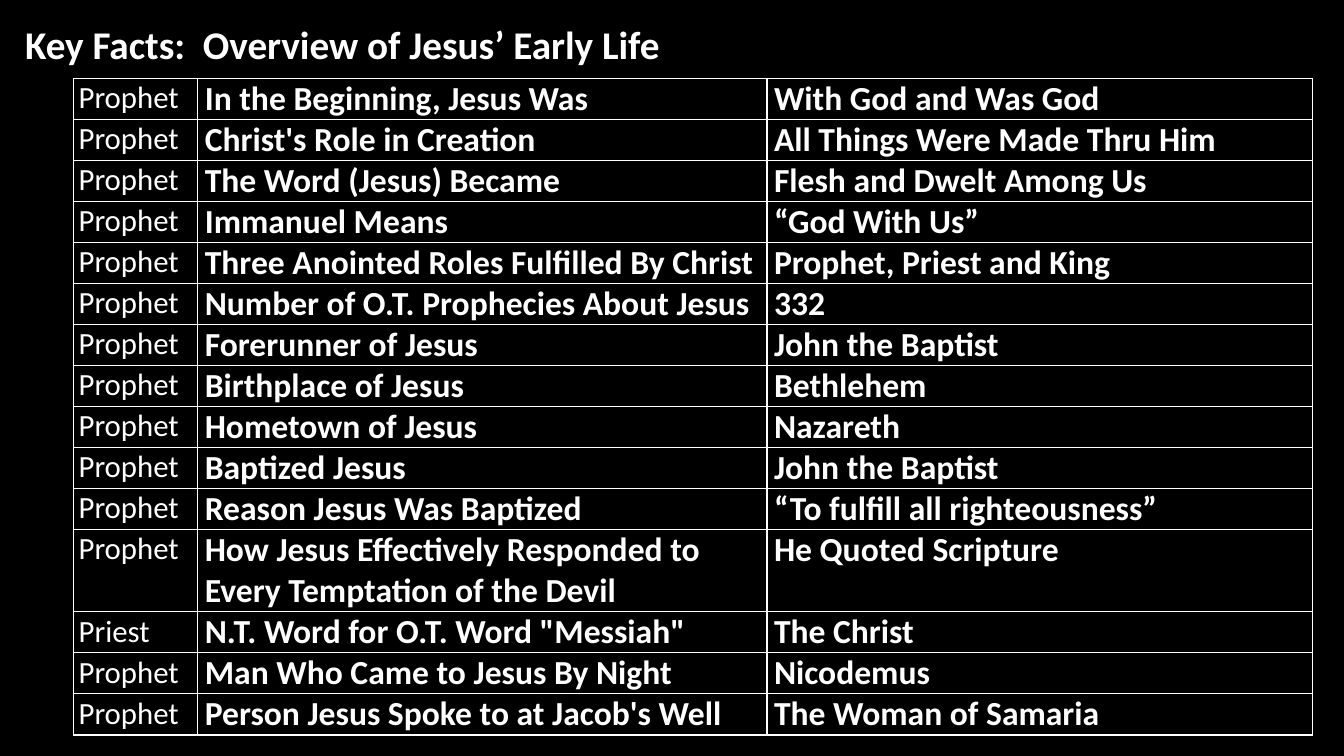
from lxml.etree import SubElement as Sub
from pptx import Presentation
from pptx.dml.color import RGBColor
from pptx.enum.text import MSO_ANCHOR as Anchor, MSO_AUTO_SIZE as AutoSize, PP_ALIGN as Align
from pptx.oxml.ns import qn
from pptx.util import Pt

BLACK = RGBColor(0, 0, 0)
WHITE = RGBColor(255, 255, 255)

TITLE_FONT = {"name": "Calibri", "size": Pt(28), "bold": True}
ROLE_FONT = {"name": "Calibri", "size": Pt(22), "bold": False}
FACT_FONT = {"name": "Calibri", "size": Pt(24), "bold": True}
ROLE_CELL = {"margin_left": Pt(3.6), "margin_top": Pt(0.7), "margin_right": Pt(0.7), "margin_bottom": 0}
FACT_CELL = {"margin_left": Pt(5), "margin_top": 0, "margin_right": Pt(5), "margin_bottom": 0}
COLUMNS = [(88.7, ROLE_CELL, ROLE_FONT), (406.6, FACT_CELL, FACT_FONT), (389.6, FACT_CELL, FACT_FONT)]
ROW_HEIGHT = 29.15

FACTS = [
    ("Prophet", "In the Beginning, Jesus Was", "With God and Was God"),
    ("Prophet", "Christ's Role in Creation", "All Things Were Made Thru Him"),
    ("Prophet", "The Word (Jesus) Became", "Flesh and Dwelt Among Us"),
    ("Prophet", "Immanuel Means", "“God With Us”"),
    ("Prophet", "Three Anointed Roles Fulfilled By Christ", "Prophet, Priest and King"),
    ("Prophet", "Number of O.T. Prophecies About Jesus", "332"),
    ("Prophet", "Forerunner of Jesus", "John the Baptist"),
    ("Prophet", "Birthplace of Jesus", "Bethlehem"),
    ("Prophet", "Hometown of Jesus", "Nazareth"),
    ("Prophet", "Baptized Jesus", "John the Baptist"),
    ("Prophet", "Reason Jesus Was Baptized", "“To fulfill all righteousness”"),
    ("Prophet", "How Jesus Effectively Responded to Every Temptation of the Devil", "He Quoted Scripture"),
    ("Priest", "N.T. Word for O.T. Word \"Messiah\"", "The Christ"),
    ("Prophet", "Man Who Came to Jesus By Night", "Nicodemus"),
    ("Prophet", "Person Jesus Spoke to at Jacob's Well", "The Woman of Samaria"),
]


def write(tf, text, font):
    p = tf.paragraphs[0]
    p.alignment = Align.LEFT
    r = p.add_run()
    r.text = text
    r.font.color.rgb = WHITE
    for key, value in font.items():
        setattr(r.font, key, value)


def add_borders(cell):
    tcPr = cell._tc.get_or_add_tcPr()
    for side in ("a:lnL", "a:lnR", "a:lnT", "a:lnB"):
        ln = Sub(tcPr, qn(side), w=str(Pt(1)))
        fill = Sub(ln, qn("a:solidFill"))
        Sub(fill, qn("a:srgbClr"), val=str(WHITE))


prs = Presentation()
prs.slide_width = Pt(960)
prs.slide_height = Pt(540)
s = prs.slides.add_slide(prs.slide_layouts[5])
s.background.fill.solid()
s.background.fill.fore_color.rgb = BLACK

title = s.shapes.title
title.left, title.top, title.width, title.height = Pt(10.8), Pt(10.8), Pt(839.5), Pt(41)
tf = title.text_frame
tf.word_wrap = True
tf.auto_size = AutoSize.NONE
tf.vertical_anchor = Anchor.TOP
write(tf, "Key Facts:  Overview of Jesus’ Early Life", TITLE_FONT)

width = sum(column[0] for column in COLUMNS)
height = ROW_HEIGHT * (len(FACTS) + 1)
frame = s.shapes.add_table(len(FACTS), len(COLUMNS), Pt(52.6), Pt(56), Pt(width), Pt(height))
table = frame.table
table.first_row = False
table.horz_banding = False

for col, (col_width, _, _) in zip(table.columns, COLUMNS):
    col.width = Pt(col_width)

for i, fact in enumerate(FACTS):
    lines = 2 if len(fact[1]) > 40 else 1
    table.rows[i].height = Pt(ROW_HEIGHT * lines)
    for j, (text, (_, layout, font)) in enumerate(zip(fact, COLUMNS)):
        cell = table.cell(i, j)
        for key, value in layout.items():
            setattr(cell, key, value)
        cell.vertical_anchor = Anchor.TOP
        add_borders(cell)
        cell.fill.background()
        write(cell.text_frame, text, font)

prs.save("out.pptx")
